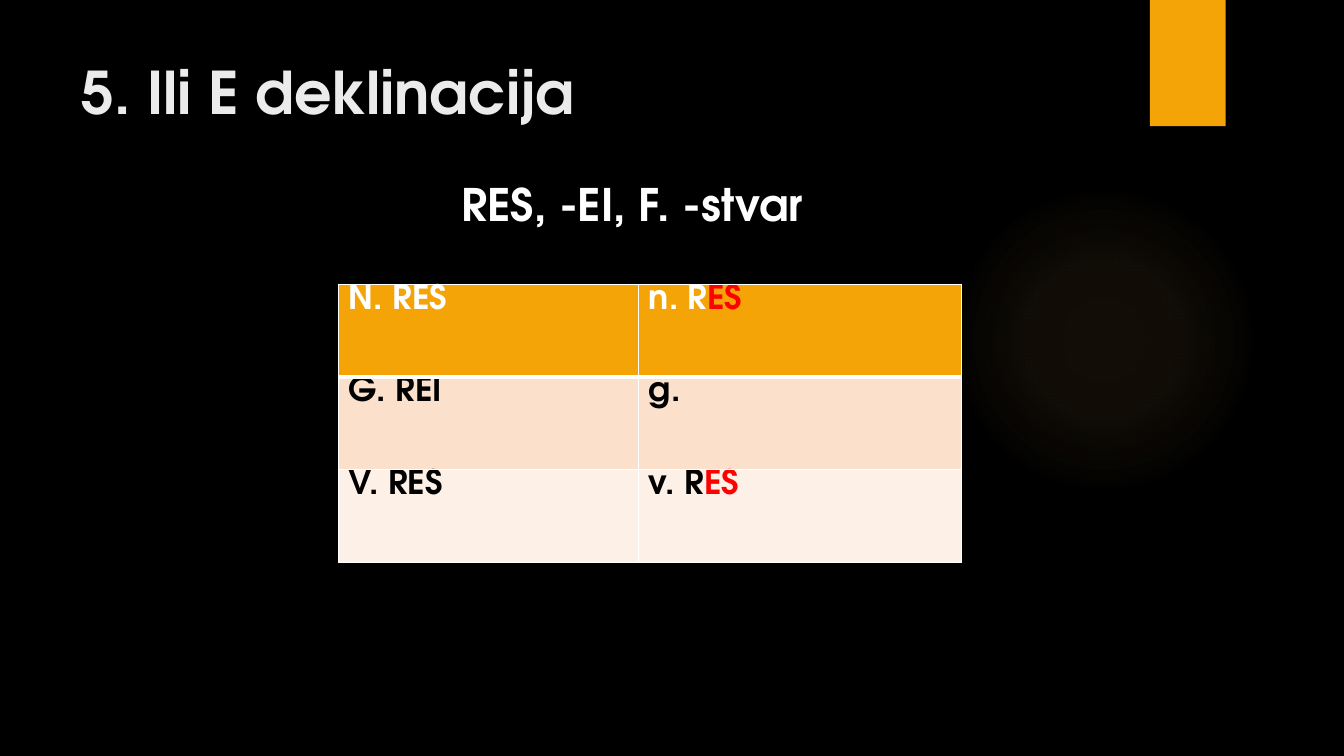
from lxml.etree import SubElement
from pptx import Presentation
from pptx.dml.color import RGBColor
from pptx.enum.shapes import MSO_SHAPE
from pptx.enum.text import MSO_ANCHOR, PP_ALIGN
from pptx.oxml import parse_xml
from pptx.oxml.ns import nsdecls, qn
from pptx.util import Cm, Pt

# Content: each table cell is (stem, highlighted ending)
TITLE = "5. Ili E deklinacija"
HEADWORD = "RES, -EI, F. -stvar"
DECLENSION = [
    [("N. RES", ""), ("n. R", "ES")],
    [("G. REI", ""), ("g.", "")],
    [("V. RES", ""), ("v. R", "ES")],
]
ROW_STYLES = [("F5A408", "FFFFFF"), ("FBE0CC", "000000"), ("FDF0E7", "000000")]
COL_WIDTHS = [7.57, 8.13]
ROW_HEIGHT = 2.34
FONT = "TeX Gyre Adventor"
ORANGE, WHITE, RED = "F5A408", "FFFFFF", "FF0000"
GLOW = "FAC96A"
GLOW_STOPS = [(0, 7), (36, 6), (69, 0)]  # position %, opacity %


def rgb(value):
    return RGBColor.from_string(value)


def style(p, size, color):
    p.alignment = PP_ALIGN.LEFT
    p.font.name, p.font.size, p.font.bold = FONT, Pt(size), True
    p.font.color.rgb = rgb(color)


def add_plain_shape(s, kind, left, top, width, height, color):
    sp = s.shapes.add_shape(kind, Cm(left), Cm(top), Cm(width), Cm(height))
    sp.shadow.inherit = False
    sp.fill.solid()
    sp.fill.fore_color.rgb = rgb(color)
    sp.line.fill.background()
    return sp


def make_glow(sp):
    stops = "".join(
        f'<a:gs pos="{pos * 1000}"><a:srgbClr val="{GLOW}">'
        f'<a:alpha val="{alpha * 1000}"/></a:srgbClr></a:gs>'
        for pos, alpha in GLOW_STOPS)
    grad = parse_xml(
        f'<a:gradFill {nsdecls("a")}><a:gsLst>{stops}</a:gsLst><a:path path="circle">'
        '<a:fillToRect l="50000" t="50000" r="50000" b="50000"/></a:path></a:gradFill>')
    solid = sp.element.spPr.find(qn("a:solidFill"))
    solid.getparent().replace(solid, grad)


def set_borders(cell, top, bottom):
    tc_pr = cell._tc.get_or_add_tcPr()
    widths = {"lnL": 1, "lnR": 1, "lnT": top, "lnB": bottom}
    for i, (tag, width) in enumerate(widths.items()):
        ln = SubElement(tc_pr, qn(f"a:{tag}"), w=str(Pt(width)))
        fill = SubElement(ln, qn("a:solidFill"))
        SubElement(fill, qn("a:srgbClr"), val=WHITE)
        tc_pr.insert(i, ln)


prs = Presentation()
prs.slide_width, prs.slide_height = Cm(33.87), Cm(19.05)
s = prs.slides.add_slide(prs.slide_layouts[5])
s.background.fill.solid()
s.background.fill.fore_color.rgb = rgb("000000")

# Decoration
make_glow(add_plain_shape(s, MSO_SHAPE.OVAL, 23.9, 4.65, 7.82, 7.82, GLOW))
add_plain_shape(s, MSO_SHAPE.RECTANGLE, 28.98, 0, 1.91, 3.18, ORANGE)

# Title
title = s.shapes.title
title.left, title.top, title.width, title.height = Cm(1.8), Cm(1.27), Cm(26.14), Cm(3.89)
tf = title.text_frame
tf.text = TITLE
tf.vertical_anchor = MSO_ANCHOR.TOP
style(tf.paragraphs[0], 42, "EBEBEB")

# Headword
tf = s.shapes.add_textbox(Cm(11.38), Cm(4.34), Cm(12.22), Cm(1.6)).text_frame
tf.word_wrap = True
tf.vertical_anchor = MSO_ANCHOR.BOTTOM
tf.text = HEADWORD
style(tf.paragraphs[0], 32, WHITE)

# Declension table
table = s.shapes.add_table(
    len(DECLENSION), len(COL_WIDTHS), Cm(8.53), Cm(7.16),
    Cm(sum(COL_WIDTHS)), Cm(ROW_HEIGHT * len(DECLENSION))).table
for column, width in zip(table.columns, COL_WIDTHS):
    column.width = Cm(width)
for r, (row, (fill, color)) in enumerate(zip(DECLENSION, ROW_STYLES)):
    table.rows[r].height = Cm(ROW_HEIGHT)
    for c, (stem, ending) in enumerate(row):
        cell = table.cell(r, c)
        cell.margin_top = cell.margin_bottom = 0
        cell.fill.solid()
        cell.fill.fore_color.rgb = rgb(fill)
        set_borders(cell, top=3 if r == 1 else 1, bottom=3 if r == 0 else 1)
        p = cell.text_frame.paragraphs[0]
        p.add_run().text = stem
        if ending:
            run = p.add_run()
            run.text = ending
            run.font.color.rgb = rgb(RED)
        style(p, 24, color)

prs.save("out.pptx")
